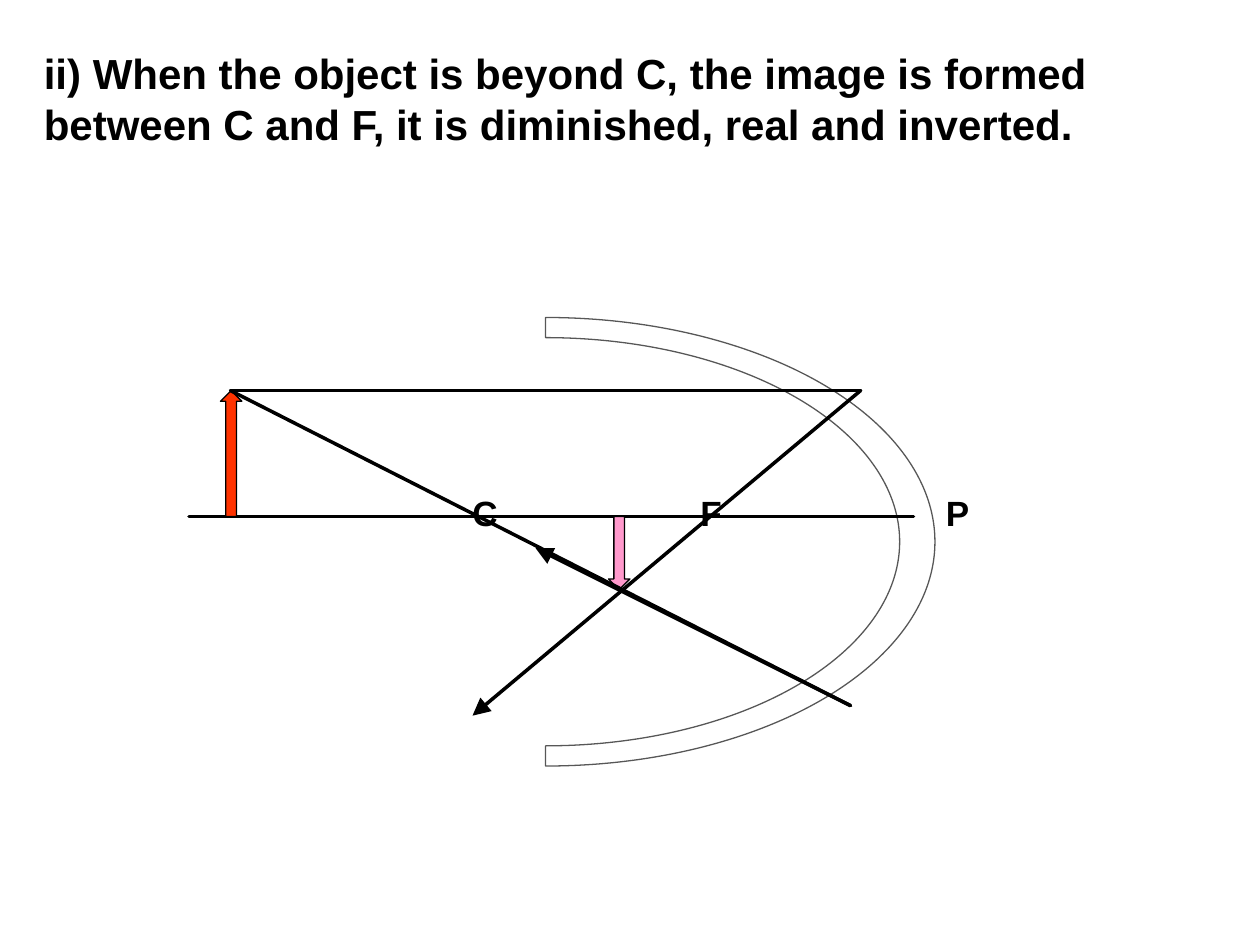
from dataclasses import dataclass

from lxml import etree
from pptx import Presentation
from pptx.dml.color import RGBColor
from pptx.enum.shapes import MSO_CONNECTOR, MSO_SHAPE
from pptx.oxml.ns import qn
from pptx.util import Inches, Pt

STRAIGHT = MSO_CONNECTOR.STRAIGHT
UP_ARROW = MSO_SHAPE.UP_ARROW
DOWN_ARROW = MSO_SHAPE.DOWN_ARROW

COLORS = {"ink": "000000", "object": "FF3300", "image": "FF99CC"}
FONT = "Arial"
BLANK_LAYOUT = 6

STATEMENT = ("ii) When the object is beyond C, the image is formed "
             "between C and F, it is diminished, real and inverted.")
POINT_NAMES = "CFP"
POINT_TABS = (3.4, 5.21, 7.16)

AXIS_Y = 4.1
OBJECT_TOP = (1.83, 3.1)
UPPER_HIT = (6.83, 3.1)
LOWER_HIT = (6.75, 5.6)

MIRROR_CENTER = (4.33, 4.3)
OUTER_RADII = (3.09, 1.78)
INNER_RADII = (2.81, 1.62)
QUARTER_TURN = 90 * 60000


@dataclass
class Ray:
    start: tuple[float, float]
    end: tuple[float, float]
    arrow: bool = False


@dataclass
class Arrow:
    kind: int
    left: float
    top: float
    height: float
    color: str


DIAGRAM = [
    Ray((1.5, AXIS_Y), (7.25, AXIS_Y)),
    Arrow(UP_ARROW, 1.75, 3.1, 1, "object"),
    Ray(OBJECT_TOP, UPPER_HIT),
    Ray(UPPER_HIT, (3.75, 5.68), arrow=True),
    Arrow(DOWN_ARROW, 4.83, AXIS_Y, 0.58, "image"),
    Ray(OBJECT_TOP, LOWER_HIT),
    Ray(LOWER_HIT, (4.25, 4.35), arrow=True),
]


def color(name: str) -> RGBColor:
    return RGBColor.from_string(COLORS[name])


def add_span(para, text: str, size: int) -> None:
    span = para.add_run()
    span.text = text
    span.font.name = FONT
    span.font.size = Pt(size)
    span.font.bold = True
    span.font.color.rgb = color("ink")


def add_text(page) -> None:
    """Statement on top, then the point names on tab stops along the axis."""
    box = page.shapes.add_textbox(Inches(0.25), Inches(0.33), Inches(9.5), Inches(6.92))
    frame = box.text_frame
    frame.word_wrap = True
    add_span(frame.paragraphs[0], STATEMENT, 24)
    names = frame.add_paragraph()
    names.space_before = Pt(196)
    tab_list = etree.SubElement(names._p.get_or_add_pPr(), qn("a:tabLst"))
    for name, position in zip(POINT_NAMES, POINT_TABS):
        etree.SubElement(tab_list, qn("a:tab"), pos=str(Inches(position)), algn="l")
        add_span(names, "\t" + name, 20)


def half_ellipse(radii: tuple[float, float]) -> list[tuple[int, int]]:
    """Top, right and bottom points of the right half of an ellipse."""
    x, y = MIRROR_CENTER
    corners = [(x, y - radii[1]), (x + radii[0], y), (x, y + radii[1])]
    return [(Inches(across), Inches(down)) for across, down in corners]


def bend(segment, radii: tuple[float, float], start: int, sweep: int) -> None:
    """Turn a straight segment into a quarter of an ellipse."""
    arc = etree.Element(qn("a:arcTo"), wR=str(Inches(radii[0])), hR=str(Inches(radii[1])),
                        stAng=str(start * QUARTER_TURN), swAng=str(sweep * QUARTER_TURN))
    segment.getparent().replace(segment, arc)


def add_mirror(page) -> None:
    outline = half_ellipse(OUTER_RADII) + half_ellipse(INNER_RADII)[::-1]
    builder = page.shapes.build_freeform(*outline[0])
    builder.add_line_segments(outline[1:], close=True)
    mirror = builder.convert_to_shape()
    segments = list(mirror._element.iter(qn("a:lnTo")))
    bend(segments[0], OUTER_RADII, 3, 1)
    bend(segments[1], OUTER_RADII, 0, 1)
    bend(segments[3], INNER_RADII, 1, -1)
    bend(segments[4], INNER_RADII, 0, -1)
    mirror.shadow.inherit = False
    mirror.fill.background()
    mirror.line.width = Pt(0.75)
    mirror.line.color.rgb = color("ink")
    line_color = mirror.line._ln.find(".//" + qn("a:srgbClr"))
    etree.SubElement(line_color, qn("a:alpha"), val="65000")


def add_ray(page, ray: Ray) -> None:
    start_x, start_y = map(Inches, ray.start)
    end_x, end_y = map(Inches, ray.end)
    line = page.shapes.add_connector(STRAIGHT, start_x, start_y, end_x, end_y)
    line.line.width = Pt(2)
    line.line.color.rgb = color("ink")
    line.line._ln.set("cap", "rnd")
    if ray.arrow:
        etree.SubElement(line.line._ln, qn("a:tailEnd"), type="triangle", w="lg", len="lg")
    etree.SubElement(line._element.spPr, qn("a:effectLst"))


def add_arrow(page, arrow: Arrow) -> None:
    shape = page.shapes.add_shape(arrow.kind, Inches(arrow.left), Inches(arrow.top),
                                  Inches(0.17), Inches(arrow.height))
    shape.shadow.inherit = False
    shape.fill.solid()
    shape.fill.fore_color.rgb = color(arrow.color)
    shape.line.width = Pt(0.75)
    shape.line.color.rgb = color("ink")


def main() -> None:
    deck = Presentation()
    deck.slide_width, deck.slide_height = Inches(10), Inches(7.5)
    page = deck.slides.add_slide(deck.slide_layouts[BLANK_LAYOUT])
    add_text(page)
    add_mirror(page)
    for part in DIAGRAM:
        if isinstance(part, Ray):
            add_ray(page, part)
        else:
            add_arrow(page, part)
    deck.save("out.pptx")


if __name__ == "__main__":
    main()
